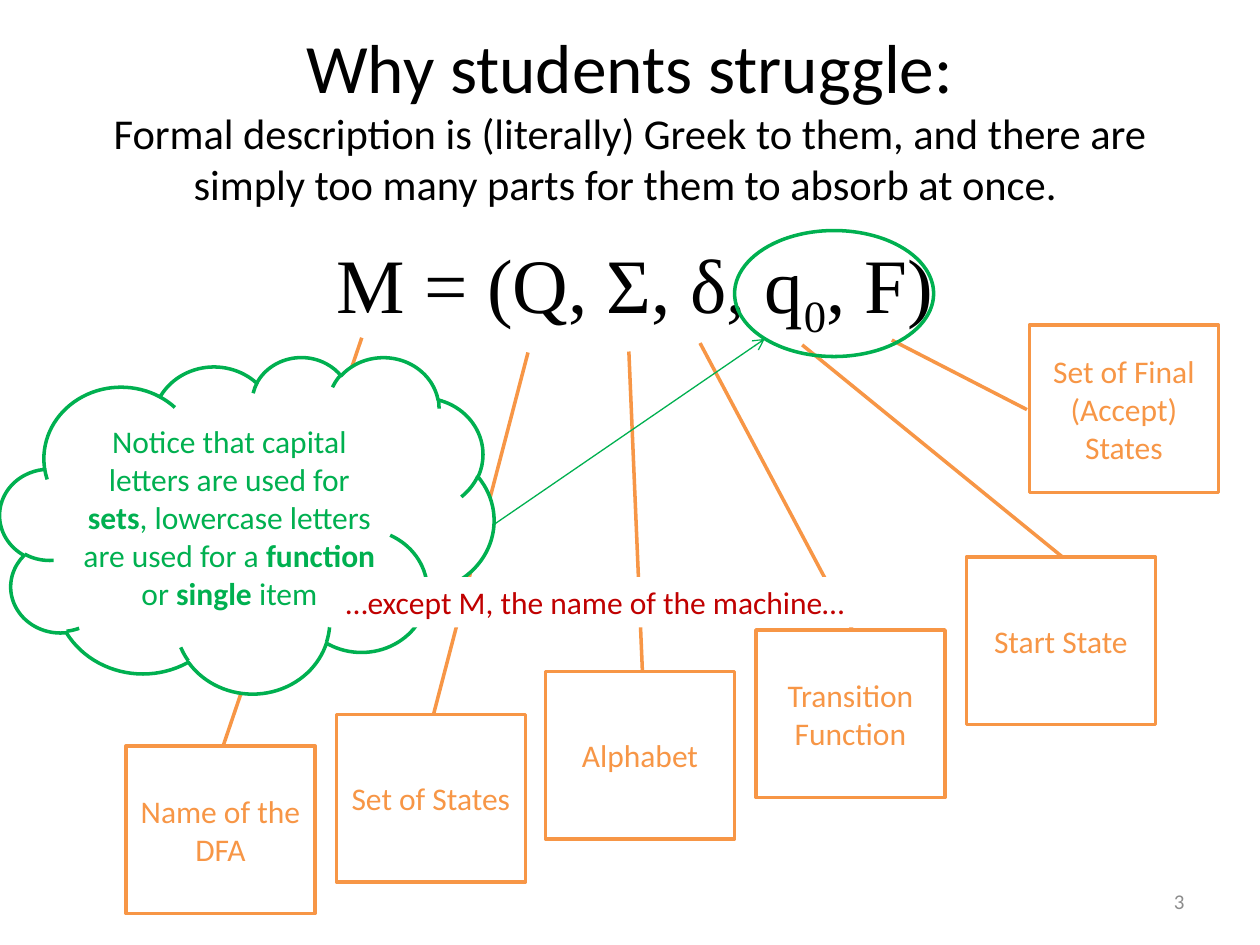
from lxml import etree
from pptx import Presentation
from pptx.dml.color import RGBColor
from pptx.enum.shapes import MSO_CONNECTOR, MSO_SHAPE
from pptx.enum.text import MSO_ANCHOR, MSO_AUTO_SIZE, PP_ALIGN
from pptx.oxml.ns import qn
from pptx.util import Inches, Pt

BLACK = RGBColor(0x00, 0x00, 0x00)
WHITE = RGBColor(0xFF, 0xFF, 0xFF)
GRAY = RGBColor(0x8C, 0x8C, 0x8C)
ORANGE = RGBColor(0xF7, 0x96, 0x46)
GREEN = RGBColor(0x00, 0xB0, 0x50)
RED = RGBColor(0xC0, 0x00, 0x00)
STRAIGHT = MSO_CONNECTOR.STRAIGHT
CALLOUT, CLOUD = MSO_SHAPE.LINE_CALLOUT_1, MSO_SHAPE.CLOUD
OVAL, RECT = MSO_SHAPE.OVAL, MSO_SHAPE.RECTANGLE
CENTER, RIGHT = PP_ALIGN.CENTER, PP_ALIGN.RIGHT
MIDDLE, NO_FIT = MSO_ANCHOR.MIDDLE, MSO_AUTO_SIZE.NONE

prs = Presentation()
prs.slide_width, prs.slide_height = Inches(10), Inches(7.5)
slide = prs.slides.add_slide(prs.slide_layouts[5])
shapes = slide.shapes


def write(shape, parts, size, color, font="Calibri", align=CENTER):
    """Fill the shape with one paragraph and return its runs."""
    shape.text_frame.word_wrap = True
    para = shape.text_frame.paragraphs[0]
    para.alignment = align
    para.font.name = font
    para.font.size = Pt(size)
    para.font.color.rgb = color
    for part in parts:
        para.add_run().text = part
    return para.runs


def draw(kind, box, fill=None, line=None):
    """Add a flat shape with the given fill and outline."""
    shape = shapes.add_shape(kind, *map(Inches, box))
    shape.shadow.inherit = False
    if fill is None:
        shape.fill.background()
    else:
        shape.fill.solid()
        shape.fill.fore_color.rgb = fill
    if line is None:
        shape.line.fill.background()
    else:
        shape.line.color.rgb = line
        shape.line.width = Pt(2)
    return shape


# Title with smaller second part
title = shapes.title
title.left, title.top = Inches(0.5), Inches(0.3)
title.width, title.height = Inches(9), Inches(1.25)
title.text_frame.auto_size = NO_FIT
title.text_frame.vertical_anchor = MIDDLE
head = write(title, ["Why students struggle:"], 39.6, BLACK)
para = title.text_frame.paragraphs[0]
para.add_line_break()
sub = para.add_run()
sub.text = ("Formal description is (literally) Greek to them, and there are "
            "simply too many parts for them to absorb at once. ")
sub.font.size = Pt(24.3)

# Slide number
number = shapes.add_textbox(Inches(7.17), Inches(6.95), Inches(2.33), Inches(0.4))
number.text_frame.vertical_anchor = MIDDLE
write(number, ["3"], 12, GRAY, align=RIGHT)

# Formal definition
formula = shapes.add_textbox(Inches(1), Inches(1.83), Inches(8.08), Inches(0.84))
runs = write(formula, ["M = (Q, Σ, δ, q", "0", ", F)"], 44, BLACK, "Times New Roman")
runs[1]._r.get_or_add_rPr().set("baseline", "-25000")

# Callouts: text, left, top, then line start and end as (y, x) shares of the box
TOP, SIDE = (0.005, 0.513), (0.505, -0.013)
callouts = [
    ("Name of the DFA", 1, 5.92, TOP, (-2.436, 1.248)),
    ("Set of States", 2.67, 5.67, TOP, (-2.16, 1.014)),
    ("Alphabet", 4.33, 5.33, TOP, (-1.91, 0.441)),
    ("Transition Function", 6, 5, TOP, (-1.712, -0.296)),
    ("Start State", 7.67, 4.42, TOP, (-1.265, -0.869)),
    ("Set of Final (Accept) States", 8.17, 2.58, SIDE, (0.09, -0.728)),
]
for text, left, top, start, end in callouts:
    callout = draw(CALLOUT, (left, top, 1.5, 1.33), WHITE, ORANGE)
    for i, share in enumerate(start + end):
        callout.adjustments[i] = share
    write(callout, [text], 18, ORANGE)

# Cloud note, every second part bold
cloud = draw(CLOUD, (0, 2.83, 3.92, 2.67), WHITE, GREEN)
note = ["Notice that capital letters are used for ", "sets",
        ", lowercase letters are used for a ", "function",
        " or ", "single", " item"]
for run in write(cloud, note, 18, GREEN)[1::2]:
    run.font.bold = True

# Exception strip
strip = draw(RECT, (2.61, 4.58, 4.23, 0.4), WHITE)
write(strip, ["…except M, the name of the machine…"], 18, RED)

# Arrow from the cloud to the ringed symbols
arrow = shapes.add_connector(STRAIGHT, Inches(3.91), Inches(4.17), Inches(6.07), Inches(2.69))
arrow.line.color.rgb = GREEN
arrow.line.width = Pt(0.75)
etree.SubElement(arrow.line._get_or_add_ln(), qn("a:tailEnd"), type="arrow")
etree.SubElement(arrow._element.spPr, qn("a:effectLst"))
draw(OVAL, (5.83, 1.83, 1.58, 1), line=GREEN)

prs.save("out.pptx")
